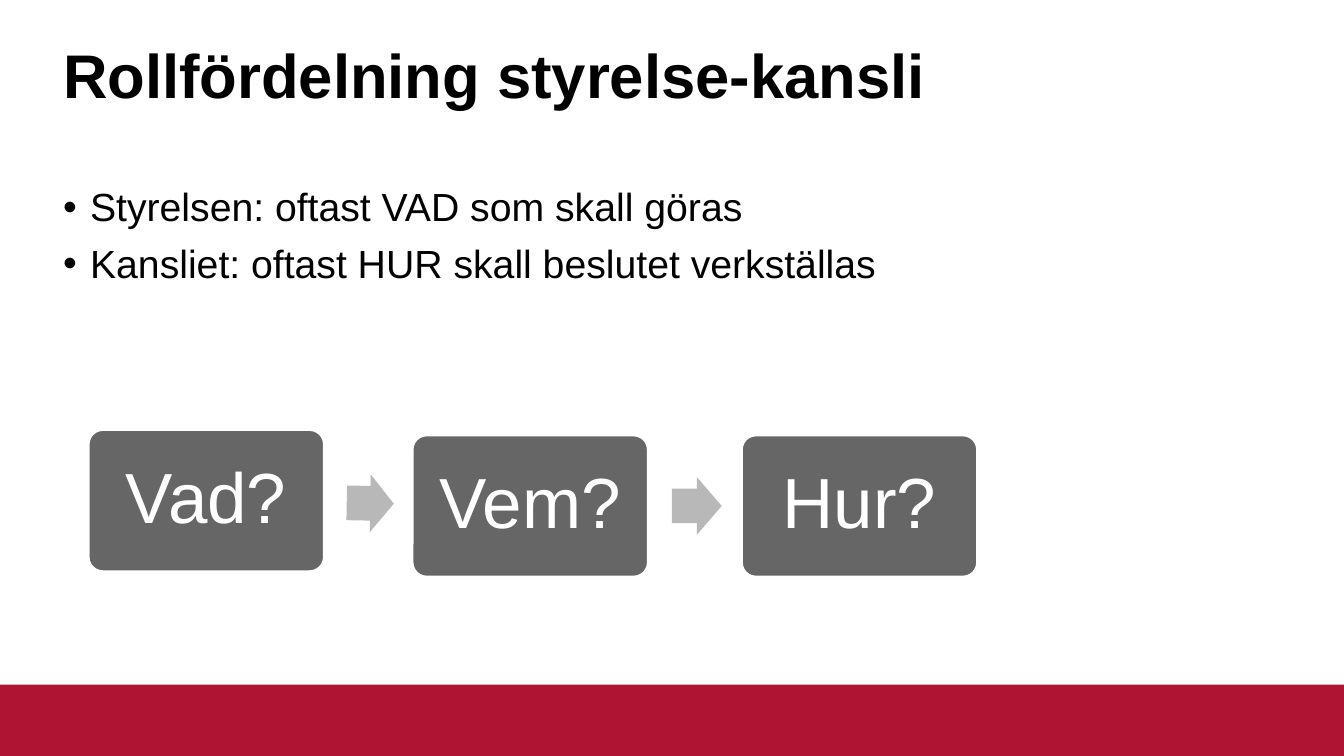
from typing import NamedTuple

from lxml.etree import SubElement
from pptx import Presentation
from pptx.dml.color import RGBColor
from pptx.enum.shapes import MSO_SHAPE as SHAPE
from pptx.enum.text import MSO_ANCHOR as ANCHOR, PP_ALIGN as ALIGN
from pptx.oxml.ns import qn
from pptx.util import Inches, Pt

COLORS = {"band": "AF1432", "card": "666666", "arrow": "B8B8B8",
          "white": "FFFFFF", "text": "000000"}
FONT = "Arial"
WIDTH = 10
HEIGHT = WIDTH * 9 / 16
BAND_HEIGHT = 0.53


class Card(NamedTuple):
    text: str
    left: float
    top: float


class Arrow(NamedTuple):
    left: float
    top: float
    width: float
    rotation: float


CARDS = [Card("Vad?", 0.66, 3.2), Card("Vem?", 3.07, 3.24), Card("Hur?", 5.52, 3.24)]
ARROWS = [Arrow(2.58, 3.53, 0.35, 1), Arrow(5, 3.55, 0.37, 0)]
BULLETS = ["Styrelsen: oftast VAD som skall göras",
           "Kansliet: oftast HUR skall beslutet verkställas"]


def rgb(name: str) -> RGBColor:
    return RGBColor.from_string(COLORS[name])


def set_margins(tf, margin: float = 0) -> None:
    tf.margin_left = tf.margin_right = tf.margin_top = tf.margin_bottom = Inches(margin)


def format_text(p, size: float, color: str, bold: bool = False) -> None:
    p.line_spacing = 0.9
    for r in p.runs:
        r.font.name, r.font.size, r.font.bold = FONT, Pt(size), bold
        r.font.color.rgb = rgb(color)


def add_shape(slide, kind, left: float, top: float, width: float, height: float, color: str):
    sp = slide.shapes.add_shape(kind, Inches(left), Inches(top), Inches(width), Inches(height))
    sp.shadow.inherit = False
    sp.fill.solid()
    sp.fill.fore_color.rgb = rgb(color)
    sp.line.fill.background()
    return sp


def add_title(slide, text: str) -> None:
    sp = slide.shapes.title
    sp.left, sp.top, sp.width, sp.height = map(Inches, (0.47, 0.31, 9.06, 0.55))
    tf = sp.text_frame
    tf.text = text
    tf.vertical_anchor = ANCHOR.MIDDLE
    set_margins(tf)
    tf.paragraphs[0].alignment = ALIGN.LEFT
    format_text(tf.paragraphs[0], 33, "text", bold=True)


def add_bullets(slide, lines: list[str]) -> None:
    sp = slide.shapes.add_textbox(Inches(0.47), Inches(1.4), Inches(8.29), Inches(3.6))
    tf = sp.text_frame
    tf.word_wrap = True
    set_margins(tf)
    for i, line in enumerate(lines):
        p = tf.add_paragraph() if i else tf.paragraphs[0]
        p.text = line
        format_text(p, 21, "text")
        if i:
            p.space_before = Pt(7.5)
        pPr = p._p.get_or_add_pPr()
        pPr.set("marL", str(Inches(0.2)))
        pPr.set("indent", str(-Inches(0.2)))
        SubElement(pPr, qn("a:buFont")).set("typeface", FONT)
        SubElement(pPr, qn("a:buChar")).set("char", "•")


def add_card(slide, card: Card) -> None:
    sp = add_shape(slide, SHAPE.ROUNDED_RECTANGLE, card.left, card.top, 1.75, 1.05, "card")
    sp.adjustments[0] = 0.1
    sp.line.color.rgb = rgb("white")
    sp.line.width = Pt(1)
    tf = sp.text_frame
    tf.text = card.text
    tf.word_wrap = False
    tf.vertical_anchor = ANCHOR.MIDDLE
    set_margins(tf, 0.16)
    tf.paragraphs[0].alignment = ALIGN.CENTER
    format_text(tf.paragraphs[0], 38, "white")


def add_arrow(slide, arrow: Arrow) -> None:
    sp = add_shape(slide, SHAPE.RIGHT_ARROW, arrow.left, arrow.top, arrow.width, 0.43, "arrow")
    sp.adjustments[0], sp.adjustments[1] = 0.6, 0.5
    sp.rotation = arrow.rotation


def main() -> None:
    """Build the slide on the division of roles between board and office."""
    prs = Presentation()
    prs.slide_width, prs.slide_height = Inches(WIDTH), Inches(HEIGHT)
    slide = prs.slides.add_slide(prs.slide_layouts[5])
    add_shape(slide, SHAPE.RECTANGLE, 0, HEIGHT - BAND_HEIGHT, WIDTH, BAND_HEIGHT, "band")
    add_title(slide, "Rollfördelning styrelse-kansli")
    add_bullets(slide, BULLETS)
    for card in CARDS:
        add_card(slide, card)
    for arrow in ARROWS:
        add_arrow(slide, arrow)
    prs.save("out.pptx")


if __name__ == "__main__":
    main()
